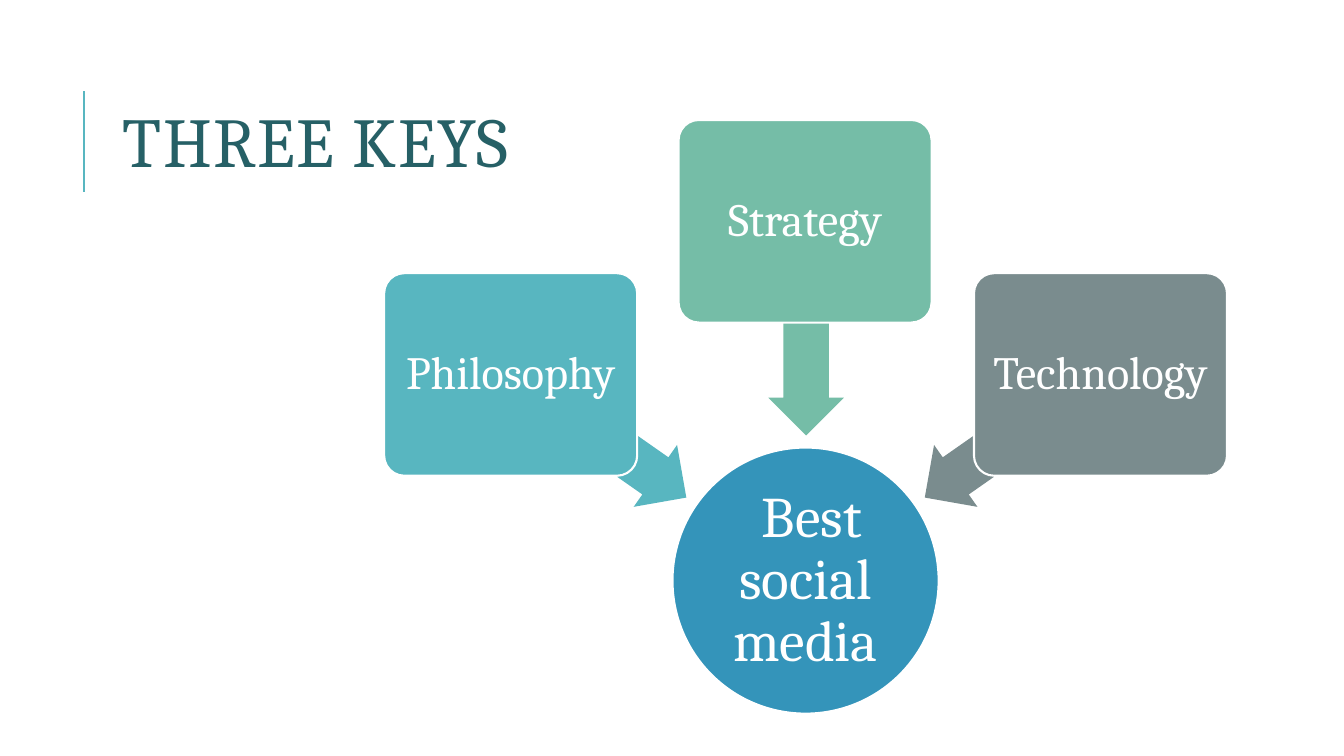
from dataclasses import dataclass

from pptx import Presentation
from pptx.dml.color import RGBColor
from pptx.enum.shapes import MSO_CONNECTOR, MSO_SHAPE
from pptx.enum.text import MSO_ANCHOR, PP_ALIGN
from pptx.oxml.ns import qn
from pptx.util import Emu, Pt

EMU_PER_PX = 9144  # 100 px to the inch
FONT = "Cambria"
WHITE, TEAL, GREEN, GREY = "FFFFFF", "58B6C0", "75BDA7", "7A8C8E"
BLUE, DARK_TEAL = "3494BA", "266066"
CARD_W, CARD_H = 251, 201
ARROW_W, ARROW_H = 213, 75


@dataclass(frozen=True)
class Key:
    label: str
    color: str
    left: int
    top: int
    arrow_left: int
    arrow_top: int
    arrow_angle: int


KEYS = [
    Key("Philosophy", TEAL, 381, 271, 487, 395, 215),
    Key("Strategy", GREEN, 673, 119, 693, 288, 270),
    Key("Technology", GREY, 966, 271, 898, 395, 325),
]


def px(n: int) -> Emu:
    return Emu(n * EMU_PER_PX)


def rgb(color: str) -> RGBColor:
    return RGBColor.from_string(color)


def add_filled(slide, kind: MSO_SHAPE, left: int, top: int, width: int, height: int, color: str):
    sp = slide.shapes.add_shape(kind, px(left), px(top), px(width), px(height))
    sp.shadow.inherit = False
    sp.fill.solid()
    sp.fill.fore_color.rgb = rgb(color)
    sp.line.fill.background()
    return sp


def outline(sp, color: str) -> None:
    sp.line.color.rgb = rgb(color)
    sp.line.width = Pt(1.5)


def write(sp, text: str, size: int, color: str, spacing: float, align: PP_ALIGN):
    """Set one vertically centred paragraph and return its run."""
    tf = sp.text_frame
    tf.text = text
    tf.word_wrap = True
    tf.vertical_anchor = MSO_ANCHOR.MIDDLE
    p = tf.paragraphs[0]
    p.alignment = align
    p.line_spacing = spacing
    r = p.runs[0]
    r.font.name = FONT
    r.font.size = Pt(size)
    r.font.color.rgb = rgb(color)
    return r


def set_insets(sp, inset: int) -> None:
    tf = sp.text_frame
    tf.margin_left = tf.margin_right = tf.margin_top = tf.margin_bottom = px(inset)


def add_title(slide) -> None:
    rule = slide.shapes.add_connector(MSO_CONNECTOR.STRAIGHT, px(83), px(190), px(83), px(90))
    outline(rule, TEAL)
    sp_pr = rule._element.spPr
    sp_pr.append(sp_pr.makeelement(qn("a:effectLst"), {}))

    box = slide.shapes.add_textbox(px(112), px(64), px(1063), px(164))
    r = write(box, "THREE KEYS", 50, DARK_TEAL, 0.8, PP_ALIGN.LEFT)
    r.font._element.set("spc", "100")


def add_goal(slide) -> None:
    sp = add_filled(slide, MSO_SHAPE.OVAL, 667, 444, 264, 264, BLUE)
    outline(sp, WHITE)
    set_insets(sp, 3)
    write(sp, " Best social media", 41, WHITE, 0.9, PP_ALIGN.CENTER)


def add_key(slide, key: Key) -> None:
    arrow = add_filled(slide, MSO_SHAPE.LEFT_ARROW, key.arrow_left, key.arrow_top,
                       ARROW_W, ARROW_H, key.color)
    arrow.adjustments[0] = 0.6
    arrow.adjustments[1] = 0.5
    arrow.rotation = key.arrow_angle

    card = add_filled(slide, MSO_SHAPE.ROUNDED_RECTANGLE, key.left, key.top,
                      CARD_W, CARD_H, key.color)
    card.adjustments[0] = 0.1
    outline(card, WHITE)
    set_insets(card, 7)
    write(card, key.label, 33, WHITE, 0.9, PP_ALIGN.CENTER)


def main() -> None:
    prs = Presentation()
    prs.slide_width, prs.slide_height = px(1333), px(750)
    slide = prs.slides.add_slide(prs.slide_layouts[6])
    add_title(slide)
    add_goal(slide)
    for key in KEYS:
        add_key(slide, key)
    prs.save("out.pptx")


if __name__ == "__main__":
    main()
